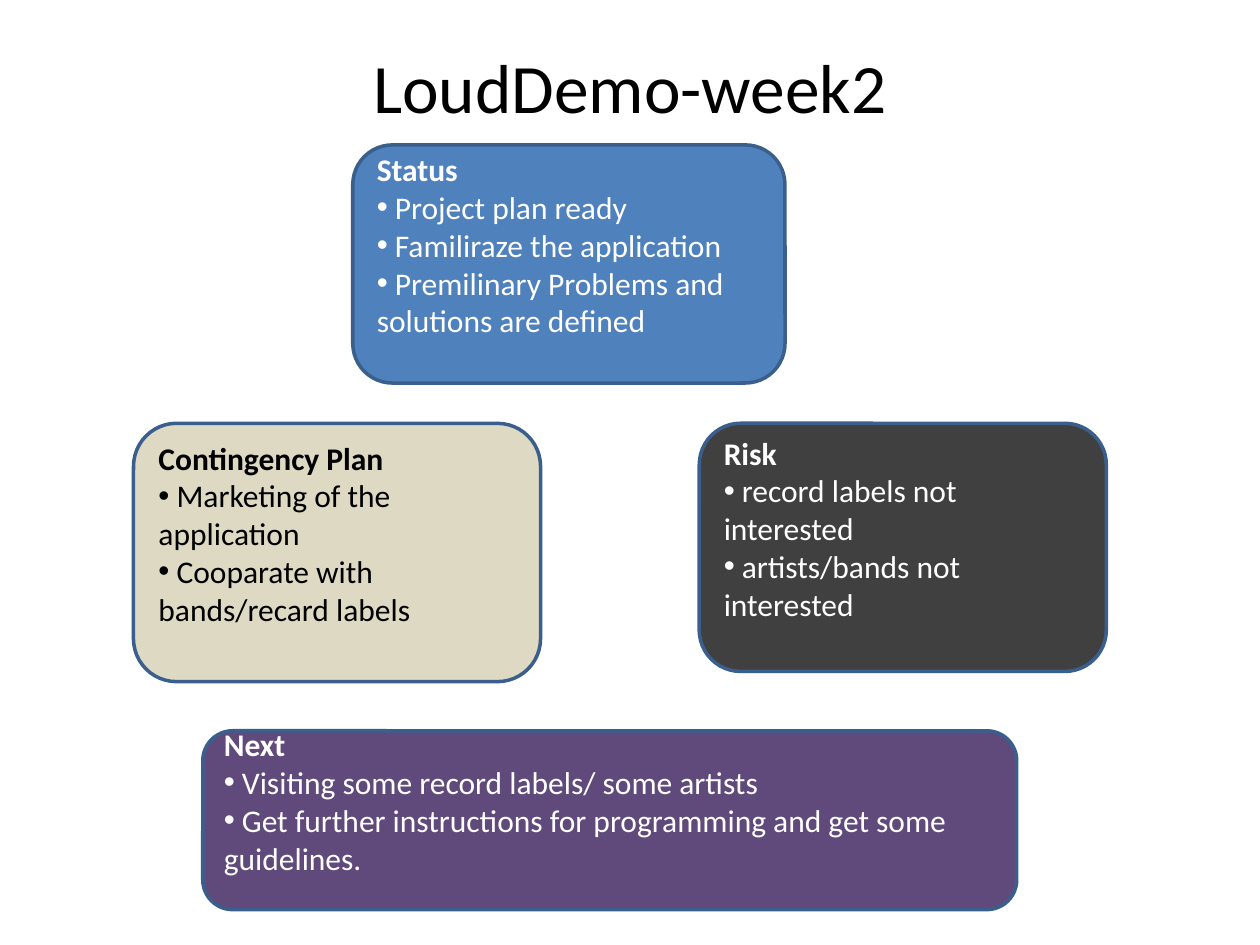
"""Build the weekly project summary slide with four rounded panels."""
from dataclasses import dataclass

from lxml.etree import SubElement
from pptx import Presentation
from pptx.dml.color import RGBColor as Rgb
from pptx.enum.shapes import MSO_SHAPE as Preset
from pptx.enum.text import MSO_ANCHOR as Anchor, MSO_AUTO_SIZE as AutoSize, PP_ALIGN as Align
from pptx.oxml.ns import qn
from pptx.slide import Slide
from pptx.text.text import _Paragraph as Paragraph
from pptx.util import Pt


@dataclass(frozen=True)
class Theme:
    """Hold the colours, font and type sizes of the slide."""
    font: str = "Calibri"
    title_size: float = 39.6
    body_size: float = 18
    dark: str = "000000"
    light: str = "FFFFFF"
    outline: str = "3A5F8C"
    status: str = "4F81BD"
    contingency: str = "DDD9C3"
    risk: str = "404040"
    upcoming: str = "604A7B"


THEME = Theme()


@dataclass(frozen=True)
class Panel:
    """Describe a panel, with its box as left, top, width and height in points."""
    heading: str
    points: tuple[str, ...]
    box: tuple[float, float, float, float]
    fill: str
    ink: str = THEME.light


PANELS = (
    Panel("Status",
          ("Project plan ready", "Familiraze the application",
           "Premilinary Problems and solutions are defined"),
          (201.6, 82.8, 247, 136.1), THEME.status),
    Panel("Contingency Plan",
          ("Marketing of the application", "Cooparate with bands/recard labels"),
          (76.3, 241.9, 232.6, 147.6), THEME.contingency, THEME.dark),
    Panel("Risk",
          ("record labels not interested", "artists/bands not interested"),
          (399.6, 241.9, 232.6, 141.8), THEME.risk),
    Panel("Next",
          ("Visiting some record labels/ some artists",
           "Get further instructions for programming and get some guidelines."),
          (115.9, 417.6, 465.1, 102.2), THEME.upcoming),
)


def apply_format(target: object, values: dict[str, object]) -> None:
    """Set each named attribute on the target."""
    for name, value in values.items():
        setattr(target, name, value)


def place(shape: object, box: tuple[float, float, float, float]) -> None:
    """Position a shape by a box given in points."""
    apply_format(shape, dict(zip(("left", "top", "width", "height"), map(Pt, box))))


def write(paragraph: Paragraph, wording: str, size: float, ink: str,
          align: Align, bold: bool = False) -> None:
    """Fill a paragraph with one formatted run."""
    paragraph.alignment = align
    run = paragraph.add_run()
    run.text = wording
    apply_format(run.font, {"name": THEME.font, "size": Pt(size), "bold": bold})
    run.font.color.rgb = Rgb.from_string(ink)


def add_bullet(paragraph: Paragraph) -> None:
    """Give a paragraph a round bullet without a hanging indent."""
    properties = paragraph._p.get_or_add_pPr()
    apply_marks = {"marL": "0", "indent": "0"}
    for name, value in apply_marks.items():
        properties.set(name, value)
    SubElement(properties, qn("a:buFont"), typeface="Arial")
    SubElement(properties, qn("a:buChar"), char="•")


def add_title(slide: Slide, wording: str) -> None:
    """Format the title placeholder."""
    title = slide.shapes.title
    place(title, (36, 21.6, 648, 55.4))
    apply_format(title.text_frame, {"vertical_anchor": Anchor.MIDDLE, "word_wrap": True,
                                    "auto_size": AutoSize.NONE})
    write(title.text_frame.paragraphs[0], wording, THEME.title_size, THEME.dark, Align.CENTER)


def add_panel(slide: Slide, panel: Panel) -> None:
    """Draw a panel with a bold heading above its bullets."""
    card = slide.shapes.add_shape(Preset.ROUNDED_RECTANGLE, *map(Pt, panel.box))
    card.shadow.inherit = False
    card.fill.solid()
    card.fill.fore_color.rgb = Rgb.from_string(panel.fill)
    card.line.color.rgb = Rgb.from_string(THEME.outline)
    card.line.width = Pt(2)
    frame = card.text_frame
    apply_format(frame, {"word_wrap": True, "vertical_anchor": Anchor.MIDDLE,
                         "margin_bottom": Pt(25.6)})
    write(frame.paragraphs[0], panel.heading, THEME.body_size, panel.ink, Align.LEFT, bold=True)
    for point in panel.points:
        paragraph = frame.add_paragraph()
        write(paragraph, f" {point}", THEME.body_size, panel.ink, Align.LEFT)
        add_bullet(paragraph)


def main() -> None:
    """Build and save the presentation."""
    deck = Presentation()
    apply_format(deck, {"slide_width": Pt(720), "slide_height": Pt(540)})
    slide = deck.slides.add_slide(deck.slide_layouts.get_by_name("Title Only"))
    add_title(slide, "LoudDemo-week2")
    for panel in PANELS:
        add_panel(slide, panel)
    deck.save("out.pptx")


if __name__ == "__main__":
    main()
